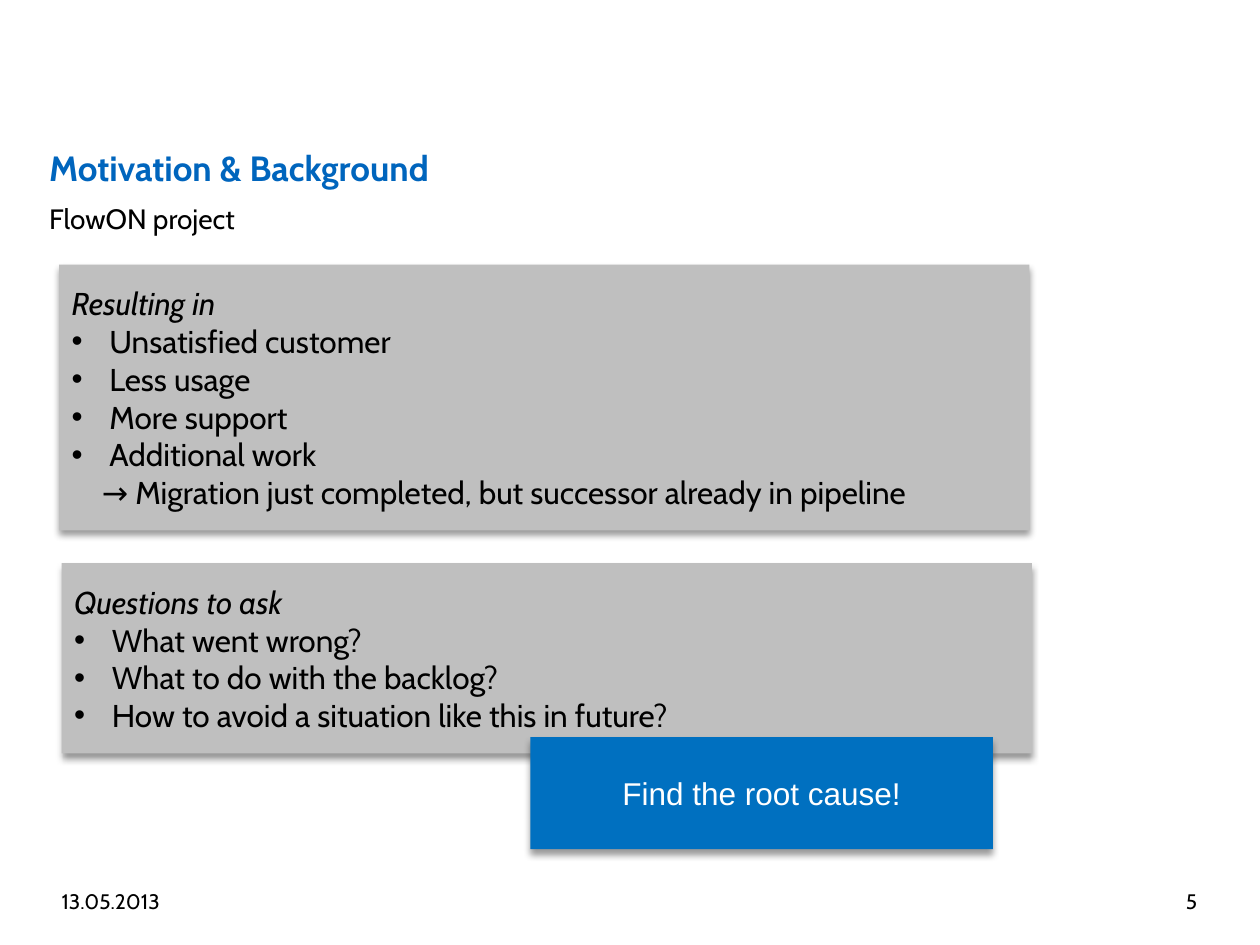
from lxml import etree
from pptx import Presentation
from pptx import util as u
from pptx.dml import color
from pptx.enum import shapes, text
from pptx.oxml import ns

HUES = {"title": "0065BD", "text": "000000", "panel": "BFBFBF",
        "call": "0070C0", "light": "FFFFFF", "shade": "000000"}
FONT = "Cabin"
SIDE = 0.39
WIDE = 8.12


def tint(name):
    return color.RGBColor.from_string(HUES[name])


def sub(node, tag, **attrs):
    return etree.SubElement(node, ns.qn(tag), attrs)


def write(para, words, size=18, font=FONT, hue="text", bold=False, slant=False,
          align=text.PP_ALIGN.LEFT, lines=None, left=0, hang=0, mark=None):
    props = para._p.get_or_add_pPr()
    props.set("marL", str(u.Inches(left)))
    props.set("indent", str(-u.Inches(hang)))
    if mark:
        sub(props, "a:buFont", typeface="Arial")
        sub(props, "a:buChar", char=mark)
    else:
        sub(props, "a:buNone")
    para.alignment = align
    para.space_before = u.Pt(0)
    if lines:
        para.line_spacing = lines
    run = para.add_run()
    run.text = words
    face = run.font
    face.name, face.size = font, u.Pt(size)
    face.bold, face.italic = bold, slant
    face.color.rgb = tint(hue)


def place(item, box):
    item.left, item.top, item.width, item.height = map(u.Inches, box)


def head(item, box, words, **form):
    place(item, box)
    frame = item.text_frame
    frame.auto_size = text.MSO_AUTO_SIZE.NONE
    frame.vertical_anchor = text.MSO_ANCHOR.TOP
    frame.margin_left = frame.margin_right = 0
    frame.margin_top = frame.margin_bottom = 0
    write(frame.paragraphs[0], words, lines=1.25, **form)


def block(slide, kind, box, hue):
    item = slide.shapes.add_shape(kind, *map(u.Inches, box))
    item.fill.solid()
    item.fill.fore_color.rgb = tint(hue)
    item.line.fill.background()
    item.shadow.inherit = False
    glow = sub(item._element.spPr.find(ns.qn("a:effectLst")), "a:outerShdw",
               blurRad=str(u.Pt(4)), dist=str(u.Pt(3)), dir="5400000",
               rotWithShape="0")
    shade = sub(glow, "a:srgbClr", val=HUES["shade"])
    sub(shade, "a:alpha", val="40000")
    item.text_frame.word_wrap = True
    item.text_frame.vertical_anchor = text.MSO_ANCHOR.MIDDLE
    return item


def panel(slide, box, label, points, close=None):
    item = block(slide, shapes.MSO_SHAPE.ROUNDED_RECTANGLE, box, "panel")
    item.adjustments[0] = 0
    frame = item.text_frame
    write(frame.paragraphs[0], label, slant=True)
    for point in points:
        write(frame.add_paragraph(), point, left=0.3, hang=0.3, mark="•")
    if close:
        write(frame.add_paragraph(), close, left=0.24)


def callout(slide, box, words):
    item = block(slide, shapes.MSO_SHAPE.RECTANGLE, box, "call")
    write(item.text_frame.paragraphs[0], words, font="Arial", hue="light",
          align=text.PP_ALIGN.CENTER)


def footer(slide, box, date, page):
    left, top, width, height = box
    part = 2.33
    spots = [(left, date, text.PP_ALIGN.LEFT),
             (left + width - part, page, text.PP_ALIGN.RIGHT)]
    for spot, words, align in spots:
        item = slide.shapes.add_textbox(
            *map(u.Inches, (spot, top, part, height)))
        frame = item.text_frame
        frame.word_wrap = True
        frame.vertical_anchor = text.MSO_ANCHOR.MIDDLE
        write(frame.paragraphs[0], words, size=12, align=align)


def main():
    deck = Presentation()
    deck.slide_width, deck.slide_height = u.Inches(10), u.Inches(7.5)
    slide = deck.slides.add_slide(deck.slide_layouts[1])
    head(slide.shapes.title, (SIDE, 1.08, WIDE, 0.39),
         "Motivation & Background", size=20, hue="title", bold=True)
    head(slide.placeholders[1], (SIDE, 1.53, WIDE, 0.32),
         "FlowON project", size=16)
    footer(slide, (SIDE, 6.95, 9.21, 0.4), "13.05.2013", "5")
    panel(slide, (0.47, 2.1, 7.7, 2.11), "Resulting in",
          ["Unsatisfied customer", "Less usage", "More support",
           "Additional work"],
          "→ Migration just completed, but successor already in pipeline")
    panel(slide, (0.49, 4.47, 7.7, 1.51), "Questions to ask",
          ["What went wrong?", "What to do with the backlog?",
           "How to avoid a situation like this in future?"])
    callout(slide, (4.21, 5.85, 3.67, 0.89), "Find the root cause!")
    deck.save("out.pptx")


if __name__ == "__main__":
    main()
